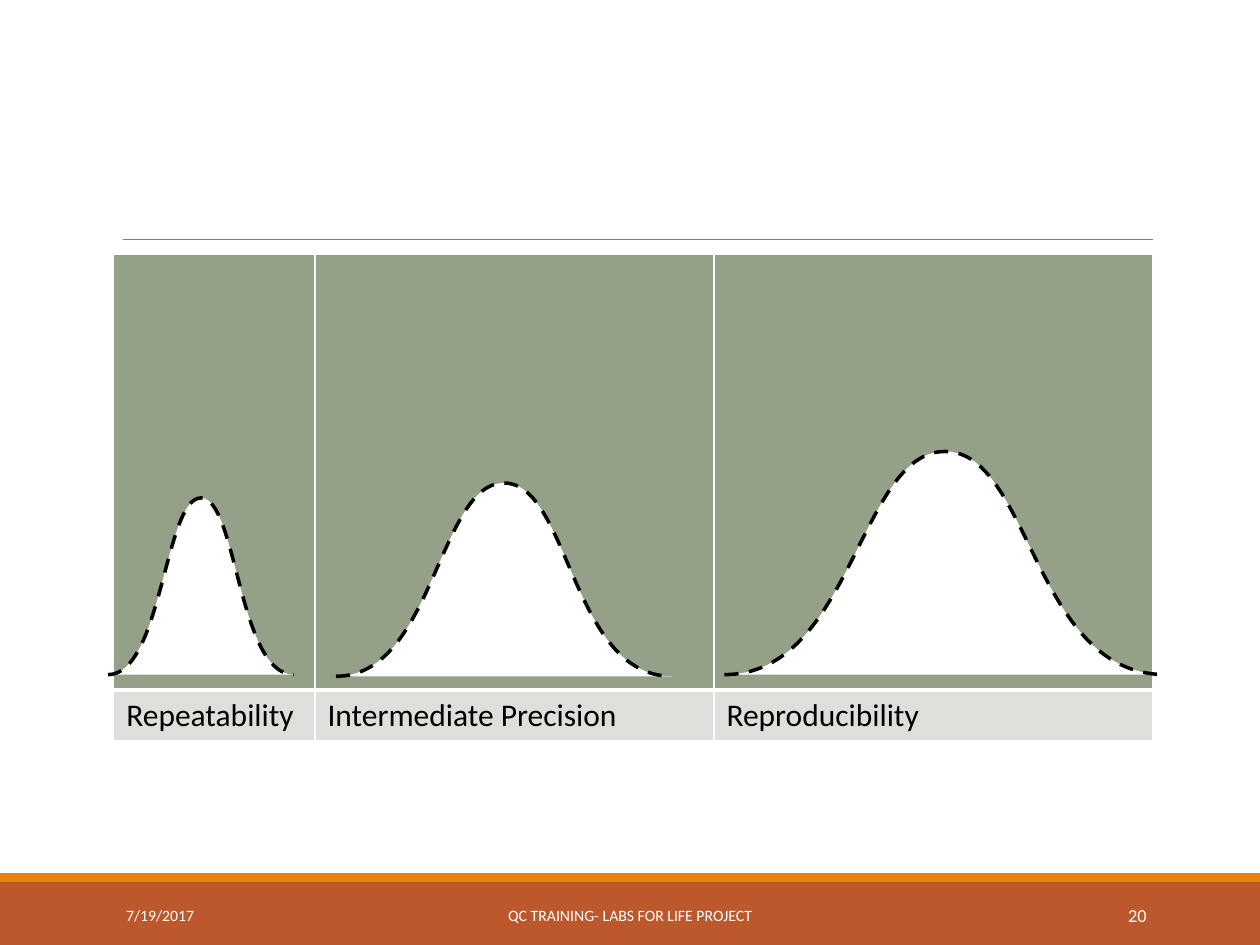
from pptx import Presentation
from pptx import util as u
from pptx.dml.color import RGBColor
from pptx.enum import dml, shapes, text
from pptx.oxml import parse_xml
from pptx.oxml.ns import nsdecls, qn
from lxml import etree

Pt = u.Pt
HUES = {"rust": "BD582C", "amber": "E48312", "rule": "808080", "sage": "94A088",
        "pale": "DCDFDA", "white": "FFFFFF", "black": "000000"}


def bend(shape):
    """Turn each three line segments of a freeform into one cubic curve."""
    track = next(shape._element.iter(qn("a:path")))
    lines = track.findall(qn("a:lnTo"))
    for i in range(0, len(lines), 3):
        curve = etree.SubElement(track, qn("a:cubicBezTo"))
        for line in lines[i:i + 3]:
            curve.append(line[0])
            track.remove(line)


class Page:
    font = "Calibri"

    def __init__(self, slide):
        self.slide = slide
        self.shapes = slide.shapes

    def hue(self, name):
        return RGBColor.from_string(HUES[name])

    def paint(self, fill, name):
        fill.solid()
        fill.fore_color.rgb = self.hue(name)

    def style(self, para, size, hue, align=text.PP_ALIGN.LEFT):
        para.alignment = align
        para.font.name = self.font
        para.font.size = Pt(size)
        para.font.color.rgb = self.hue(hue)

    def band(self, top, height, hue):
        bar = self.shapes.add_shape(shapes.MSO_SHAPE.RECTANGLE,
                                    0, Pt(top), Pt(720), Pt(height))
        bar.shadow.inherit = False
        self.paint(bar.fill, hue)
        bar.line.fill.background()

    def rule(self, left, right, y):
        line = self.shapes.add_connector(shapes.MSO_CONNECTOR.STRAIGHT,
                                         Pt(left), Pt(y), Pt(right), Pt(y))
        line.line.color.rgb = self.hue("rule")
        line.line.width = Pt(0.5)
        etree.SubElement(line._element.spPr, qn("a:effectLst"))

    def label(self, words, left, width, size, align):
        box = self.shapes.add_textbox(Pt(left), Pt(508.5), Pt(width), Pt(28.75))
        frame = box.text_frame
        frame.word_wrap = True
        frame.vertical_anchor = text.MSO_ANCHOR.MIDDLE
        frame.text = words
        self.style(frame.paragraphs[0], size, "white", align)

    def edge(self, cell, **widths):
        props = cell._tc.get_or_add_tcPr()
        for side, width in widths.items():
            props.append(parse_xml(
                f'<a:ln{side} {nsdecls("a")} w="{Pt(width)}"><a:solidFill>'
                f'<a:srgbClr val="{HUES["white"]}"/></a:solidFill></a:ln{side}>'))

    def table(self, left, top, cols, rows, names):
        grid = self.shapes.add_table(len(rows), len(cols), Pt(left), Pt(top),
                                     Pt(sum(cols)), Pt(sum(rows))).table
        for row, height in zip(grid.rows, rows):
            row.height = Pt(height)
        for i, (width, name) in enumerate(zip(cols, names)):
            grid.columns[i].width = Pt(width)
            head, foot = grid.cell(0, i), grid.cell(1, i)
            self.edge(head, L=1, R=1, T=1, B=3)
            self.edge(foot, L=1, R=1, T=3, B=1)
            self.paint(head.fill, "sage")
            self.paint(foot.fill, "pale")
            foot.text = name
            self.style(foot.text_frame.paragraphs[0], 18, "black")

    def bell(self, left, width, top, base):
        half = width / 2
        # Offsets from the left end in half widths: two controls, then an end.
        knots = ((0.58, base), (0.61, top), (1, top),
                 (1.39, top), (1.4, base), (2, base))
        draft = self.shapes.build_freeform(Pt(left), Pt(base))
        draft.add_line_segments([(Pt(left + k * half), Pt(y)) for k, y in knots],
                                close=False)
        curve = draft.convert_to_shape()
        bend(curve)
        curve.shadow.inherit = False
        self.paint(curve.fill, "white")
        curve.line.color.rgb = self.hue("black")
        curve.line.width = Pt(2)
        curve.line.dash_style = dml.MSO_LINE.DASH


def main():
    deck = Presentation()
    deck.slide_width, deck.slide_height = Pt(720), Pt(540)
    page = Page(deck.slides.add_slide(deck.slide_layouts[6]))

    page.band(504, 36, "rust")
    page.band(499, 5, "amber")
    page.rule(70.5, 658.75, 136.75)
    page.table(65, 145.5, (115, 228, 250.5), (248.75, 29),
               ("Repeatability", "Intermediate Precision", "Reproducibility"))

    align = text.PP_ALIGN
    page.label("7/19/2017", 65, 146, 9, align.LEFT)
    page.label("QC TRAINING- LABS FOR LIFE PROJECT", 217.5, 285, 9, align.CENTER)
    page.label("20", 584.5, 77.75, 10.5, align.RIGHT)

    for left, width, top, base in ((61.75, 106.25, 284.5, 385.5),
                                   (414, 252, 258, 385.5),
                                   (192, 192, 276, 386.5)):
        page.bell(left, width, top, base)

    deck.save("out.pptx")


if __name__ == "__main__":
    main()
